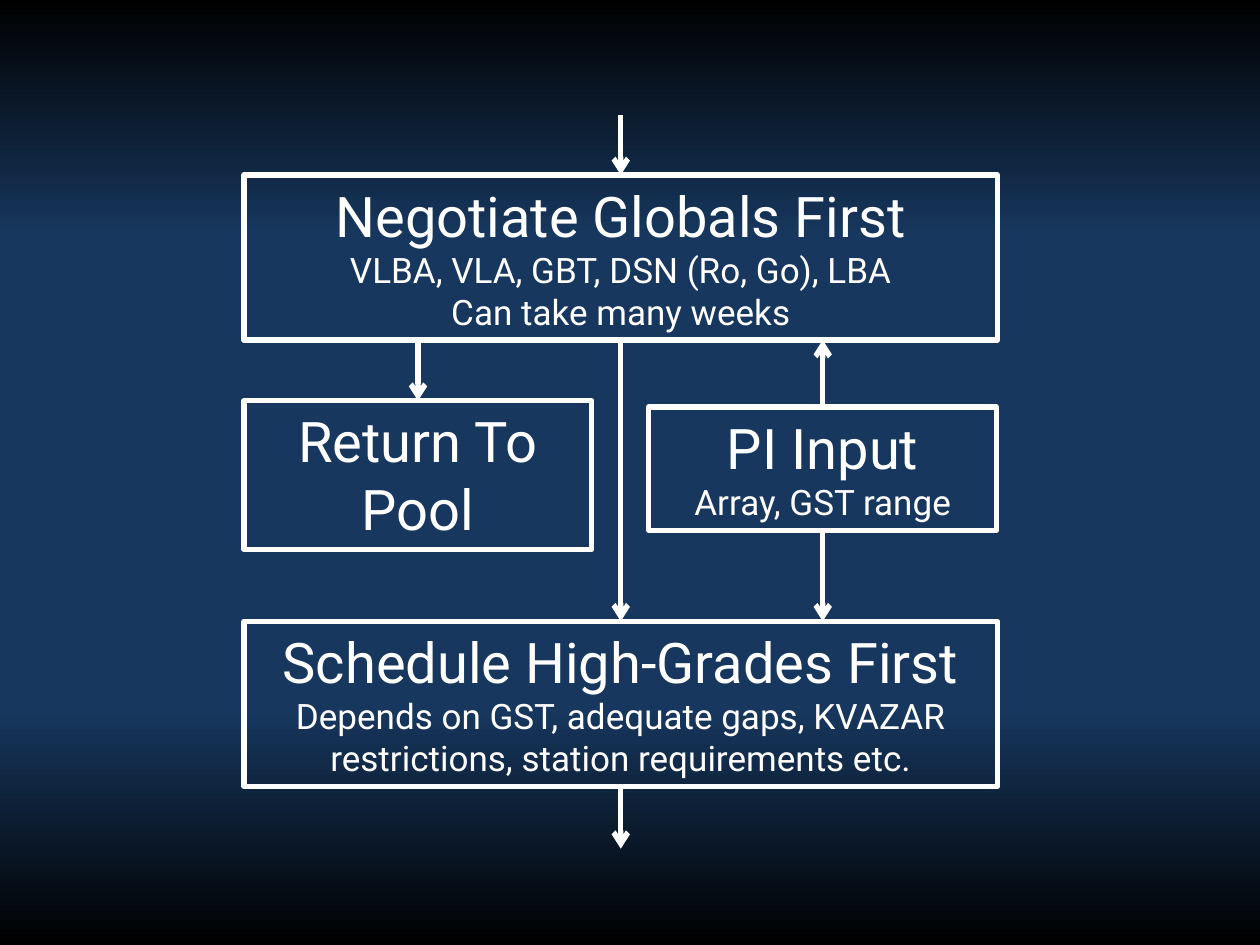
from dataclasses import dataclass
from typing import Optional

from lxml import etree
from pptx import Presentation
from pptx.dml.color import RGBColor
from pptx.enum.shapes import MSO_CONNECTOR, MSO_SHAPE
from pptx.enum.text import MSO_ANCHOR, MSO_AUTO_SIZE, PP_ALIGN
from pptx.oxml.ns import qn
from pptx.util import Pt

RECTANGLE = MSO_SHAPE.RECTANGLE
STRAIGHT = MSO_CONNECTOR.STRAIGHT
CENTER = PP_ALIGN.CENTER
TOP_ANCHOR = MSO_ANCHOR.TOP
FIT_TEXT = MSO_AUTO_SIZE.SHAPE_TO_FIT_TEXT

COLORS = {"white": "FFFFFF", "navy": "17375E", "black": "000000"}
BACKGROUND_STOPS = [(0, "black"), (25, "navy"), (75, "navy"), (100, "black")]
FONT = "Roboto"
TITLE_SIZE, DETAIL_SIZE = 32, 20
LINE_WIDTH = 3
TOP, BOTTOM = 0, 2  # connection sites of a rectangle


@dataclass
class Box:
    left: float
    top: float
    width: float
    height: float
    title: str
    details: tuple[str, ...] = ()

    @property
    def middle(self) -> float:
        return self.left + self.width / 2

    @property
    def bottom(self) -> float:
        return self.top + self.height


@dataclass
class Arrow:
    x: float
    start: float
    end: float
    begin_box: Optional[str] = None
    end_box: Optional[str] = None


LEFT, WIDE, NARROW = 139.5, 430.5, 198.7
BOXES = {
    "negotiate": Box(LEFT, 100, WIDE, 94.3, "Negotiate Globals First",
                     ("VLBA, VLA, GBT, DSN (Ro, Go), LBA", "Can take many weeks")),
    "return": Box(LEFT, 229, NARROW, 85, "Return To Pool"),
    "input": Box(LEFT + WIDE - NARROW - 0.5, 232.5, NARROW, 70.5, "PI Input",
                 ("Array, GST range",)),
    "schedule": Box(LEFT, 355, WIDE, 94.3, "Schedule High-Grades First",
                    ("Depends on GST, adequate gaps, KVAZAR restrictions, "
                     "station requirements etc.",)),
}
negotiate, pool, pi_input, schedule = BOXES.values()
ARROWS = [
    Arrow(negotiate.middle, 66, negotiate.top, None, "negotiate"),
    Arrow(pool.middle, negotiate.bottom, pool.top, None, "return"),
    Arrow(pi_input.middle, pi_input.top, negotiate.bottom, "input"),
    Arrow(negotiate.middle, negotiate.bottom, schedule.top, "negotiate", "schedule"),
    Arrow(schedule.middle, schedule.bottom, 485, "schedule"),
    Arrow(pi_input.middle, pi_input.bottom, schedule.top, "input"),
]


def color(name: str) -> RGBColor:
    return RGBColor.from_string(COLORS[name])


def paint_background(slide) -> None:
    fill = slide.background.fill
    fill.gradient()
    fill.gradient_angle = 270
    stops = next(slide.element.iter(qn("a:gsLst")))
    for stop in list(stops):
        stops.remove(stop)
    for percent, name in BACKGROUND_STOPS:
        stop = etree.SubElement(stops, qn("a:gs"), pos=str(percent * 1000))
        etree.SubElement(stop, qn("a:srgbClr"), val=COLORS[name])


def style_line(line) -> None:
    line.color.rgb = color("white")
    line.width = Pt(LINE_WIDTH)


def draw_box(slide, box: Box):
    shape = slide.shapes.add_shape(
        RECTANGLE, Pt(box.left), Pt(box.top), Pt(box.width), Pt(box.height))
    shape.shadow.inherit = False
    shape.fill.background()
    style_line(shape.line)
    frame = shape.text_frame
    frame.word_wrap = True
    frame.auto_size = FIT_TEXT
    frame.vertical_anchor = TOP_ANCHOR
    for index, text in enumerate((box.title, *box.details)):
        paragraph = frame.add_paragraph() if index else frame.paragraphs[0]
        paragraph.alignment = CENTER
        run = paragraph.add_run()
        run.text = text
        run.font.name = FONT
        run.font.size = Pt(DETAIL_SIZE if index else TITLE_SIZE)
        run.font.color.rgb = color("white")
    return shape


def draw_arrow(slide, arrow: Arrow, shapes: dict) -> None:
    connector = slide.shapes.add_connector(
        STRAIGHT, Pt(arrow.x), Pt(arrow.start), Pt(arrow.x), Pt(arrow.end))
    downward = arrow.end > arrow.start
    if arrow.begin_box:
        connector.begin_connect(shapes[arrow.begin_box], BOTTOM if downward else TOP)
    if arrow.end_box:
        connector.end_connect(shapes[arrow.end_box], TOP if downward else BOTTOM)
    style_line(connector.line)
    # Arrowhead, and no shadow
    properties = connector.element.spPr
    etree.SubElement(properties.find(qn("a:ln")), qn("a:tailEnd"), type="arrow")
    etree.SubElement(properties, qn("a:effectLst"))


def main() -> None:
    presentation = Presentation()
    presentation.slide_width, presentation.slide_height = Pt(720), Pt(540)
    slide = presentation.slides.add_slide(presentation.slide_layouts[6])
    paint_background(slide)

    # Flow chart: boxes first, then the arrows that join them
    shapes = {name: draw_box(slide, box) for name, box in BOXES.items()}
    for arrow in ARROWS:
        draw_arrow(slide, arrow, shapes)

    presentation.save("out.pptx")


if __name__ == "__main__":
    main()
